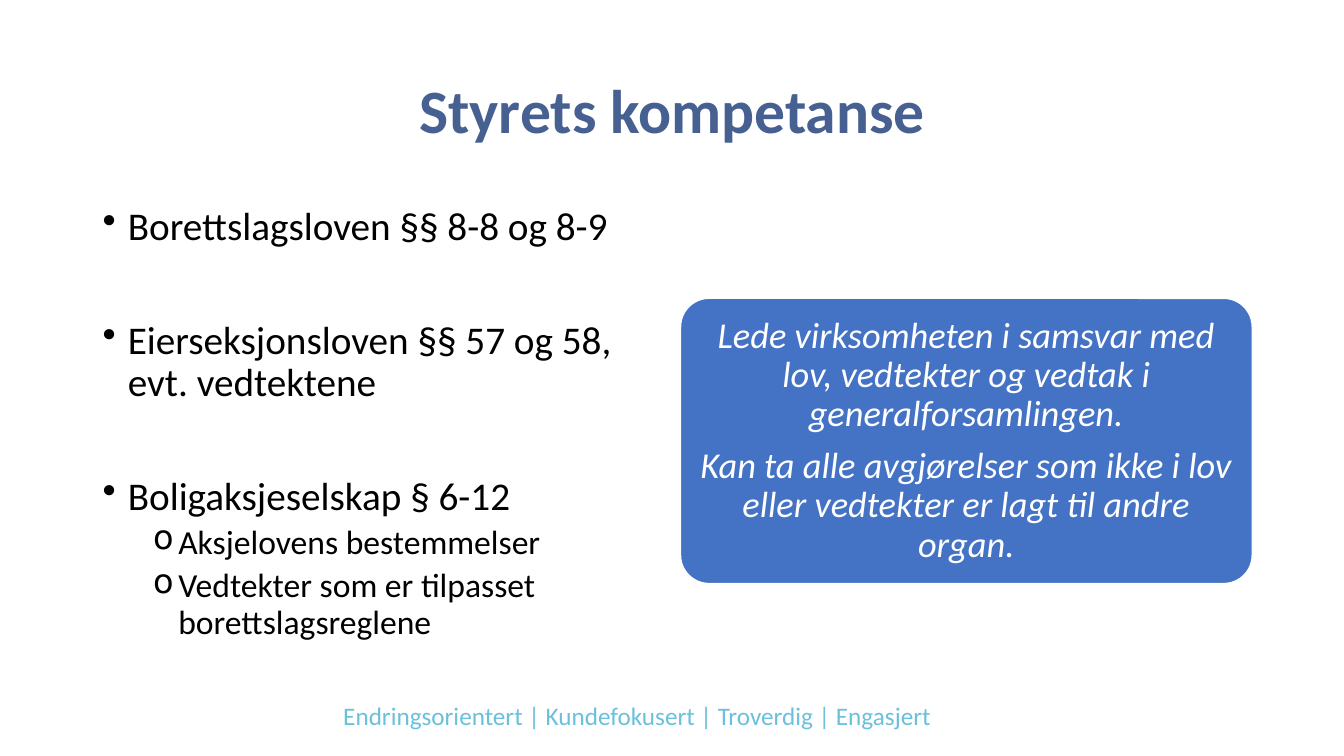
from dataclasses import dataclass

from lxml import etree
from pptx import Presentation
from pptx.dml.color import RGBColor
from pptx.enum.shapes import MSO_SHAPE
from pptx.enum.text import MSO_ANCHOR, PP_ALIGN
from pptx.oxml.ns import qn
from pptx.util import Inches, Pt

ROUNDED = MSO_SHAPE.ROUNDED_RECTANGLE
MIDDLE, TOP = MSO_ANCHOR.MIDDLE, MSO_ANCHOR.TOP
CENTER, LEFT = PP_ALIGN.CENTER, PP_ALIGN.LEFT
TITLE_ONLY = 5
HANGING = 0.25


@dataclass
class Para:
    """A paragraph with its spacing in points and indent in inches."""
    text: str
    size: int
    color: str = "000000"
    align: PP_ALIGN = LEFT
    line: float = 0.9
    before: float = 0
    after: float = 0
    bullet: str = ""
    indent: float = 0
    level: int = 0
    bold: bool = False
    italic: bool = False


def rgb(value: str) -> RGBColor:
    """Turn a hex string into a colour."""
    return RGBColor.from_string(value)


def place(shape, left: float, top: float, width: float, height: float) -> None:
    """Move and size a shape in inches."""
    box = {"left": left, "top": top, "width": width, "height": height}
    for name, value in box.items():
        setattr(shape, name, Inches(value))


def add_bullet(p, char: str, indent: float) -> None:
    """Give a paragraph a hanging bullet."""
    pPr = p._p.get_or_add_pPr()
    pPr.set("marL", str(Inches(indent)))
    pPr.set("indent", str(Inches(-HANGING)))
    etree.SubElement(pPr, qn("a:buChar")).set("char", char)


def write(tf, paras: list[Para], anchor: MSO_ANCHOR = TOP) -> None:
    """Fill a text frame with formatted paragraphs."""
    tf.word_wrap = True
    tf.vertical_anchor = anchor
    for i, para in enumerate(paras):
        p = tf.add_paragraph() if i else tf.paragraphs[0]
        if para.bullet:
            add_bullet(p, para.bullet, para.indent)
        layout = {"alignment": para.align, "line_spacing": para.line, "level": para.level,
                  "space_before": Pt(para.before), "space_after": Pt(para.after)}
        for name, value in layout.items():
            setattr(p, name, value)
        r = p.add_run()
        r.text = para.text
        style = {"name": "Calibri", "size": Pt(para.size), "bold": para.bold, "italic": para.italic}
        for name, value in style.items():
            setattr(r.font, name, value)
        r.font.color.rgb = rgb(para.color)


def law(text: str, before: float = 51) -> Para:
    """Describe a main bullet."""
    return Para(text, 28, before=before, bullet="•", indent=0.25)


def detail(text: str) -> Para:
    """Describe a second-level bullet."""
    return Para(text, 24, before=5, bullet="o", indent=0.75, level=1)


def duty(text: str, after: float = 0) -> Para:
    """Describe a paragraph of the duty box."""
    return Para(text, 26, "FFFFFF", CENTER, after=after, italic=True)


def add_text(s, box: tuple[float, float, float, float], paras: list[Para]) -> None:
    """Add a text box."""
    tb = s.shapes.add_textbox(*map(Inches, box))
    write(tb.text_frame, paras)


def add_duty_box(s, paras: list[Para]) -> None:
    """Add the rounded box with the duties of the board."""
    box = s.shapes.add_shape(ROUNDED, *map(Inches, (6.75, 2.96, 5.67, 2.83)))
    box.adjustments[0] = 0.1
    box.shadow.inherit = False
    box.fill.solid()
    box.fill.fore_color.rgb = rgb("4472C4")
    box.line.color.rgb = rgb("FFFFFF")
    box.line.width = Pt(1)
    tf = box.text_frame
    margins = {"margin_left": 0.05, "margin_right": 0.05, "margin_top": 0.04, "margin_bottom": 0.04}
    for name, value in margins.items():
        setattr(tf, name, Inches(value))
    write(tf, paras, MIDDLE)


def main() -> None:
    """Build the slide and save it."""
    prs = Presentation()
    prs.slide_width, prs.slide_height = Inches(13.33), Inches(7.5)
    s = prs.slides.add_slide(prs.slide_layouts[TITLE_ONLY])
    title = s.shapes.title
    place(title, 0.92, 0.4, 11.5, 1.45)
    write(title.text_frame, [Para("Styrets kompetanse", 44, "466091", CENTER, bold=True)], MIDDLE)
    add_text(s, (0.92, 2, 5.67, 4.76), [
        law("Borettslagsloven §§ 8-8 og 8-9", before=0),
        law("Eierseksjonsloven §§ 57 og 58, evt. vedtektene"),
        law("Boligaksjeselskap § 6-12"),
        detail("Aksjelovens bestemmelser"),
        detail("Vedtekter som er tilpasset borettslagsreglene"),
    ])
    add_duty_box(s, [
        duty("Lede virksomheten i samsvar med lov, vedtekter og vedtak i generalforsamlingen.", after=9),
        duty("Kan ta alle avgjørelser som ikke i lov eller vedtekter er lagt til andre organ."),
    ])
    add_text(s, (1.47, 6.9, 9.7, 0.4), [
        Para("Endringsorientert | Kundefokusert | Troverdig | Engasjert", 18, "6BC0DC", CENTER, line=1.0),
    ])
    prs.save("out.pptx")


if __name__ == "__main__":
    main()
